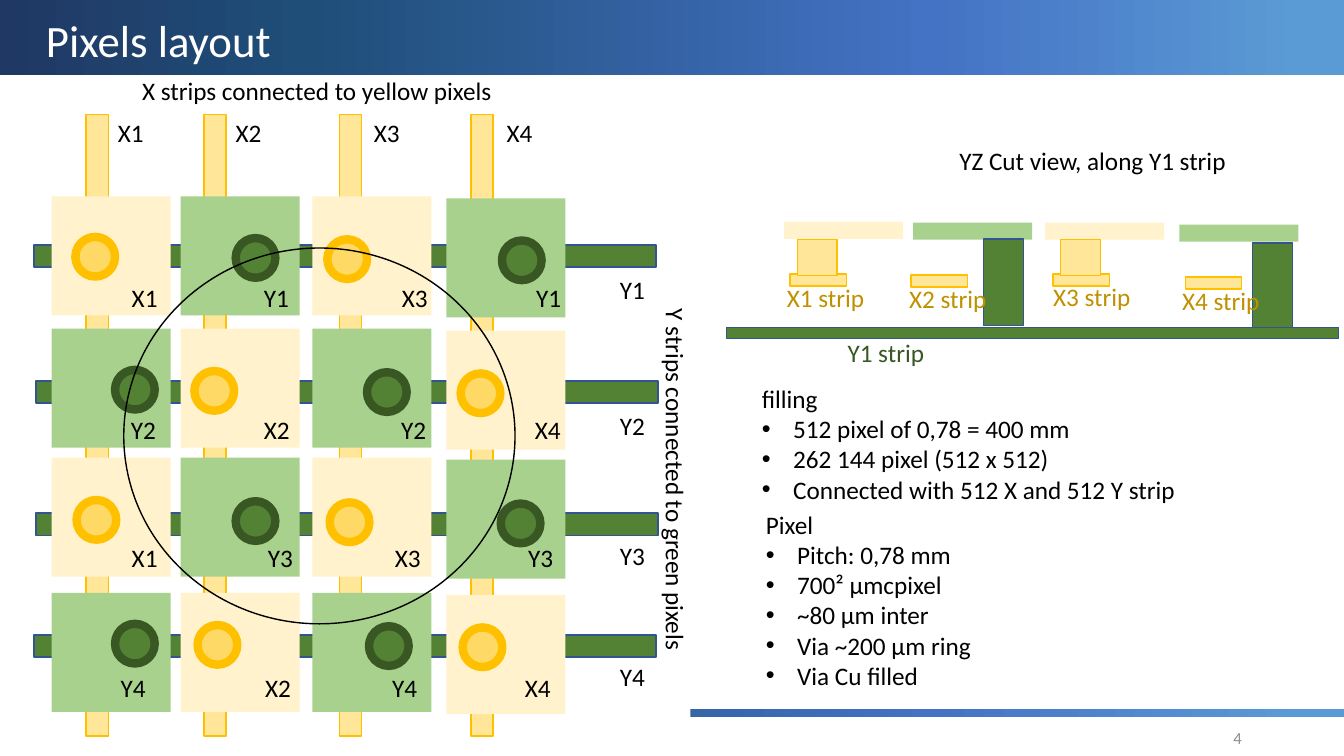
import dataclasses

import lxml.etree
import pptx
import pptx.dml.color
import pptx.enum.shapes
import pptx.enum.text
import pptx.oxml.ns
import pptx.util

Cm = pptx.util.Cm
Pt = pptx.util.Pt
RGB = pptx.dml.color.RGBColor.from_string
qn = pptx.oxml.ns.qn
RECT = pptx.enum.shapes.MSO_SHAPE.RECTANGLE
OVAL = pptx.enum.shapes.MSO_SHAPE.OVAL
ALIGN = pptx.enum.text.PP_ALIGN
ANCHOR = pptx.enum.text.MSO_ANCHOR


@dataclasses.dataclass(frozen=True)
class Theme:
    font: str = "Calibri"
    title_size: int = 32
    body_size: int = 18
    number_size: int = 12
    white: str = "FFFFFF"
    black: str = "000000"
    grey: str = "8C8C8C"
    gold: str = "FFC000"
    gold_text: str = "BF9000"
    x_strip: str = "FFE699"
    x_via: str = "FFD966"
    x_pixel: str = "FFF2CC"
    y_strip: str = "548235"
    y_ring: str = "385723"
    y_pixel: str = "A9D18E"
    y_edge: str = "325491"
    bar: tuple = ((0, "203864"), (23, "1F4E79"), (69, "4472C4"), (97, "5B9BD5"))


theme = Theme()
deck = pptx.Presentation()
deck.slide_width, deck.slide_height = Cm(33.87), Cm(19.05)
slide = deck.slides.add_slide(deck.slide_layouts[6])


def add_block(kind, left, top, width, height, fill=None, edge=None, weight=1):
    block = slide.shapes.add_shape(kind, Cm(left), Cm(top), Cm(width), Cm(height))
    block.shadow.inherit = False
    if fill:
        block.fill.solid()
        block.fill.fore_color.rgb = RGB(fill)
    else:
        block.fill.background()
    if edge:
        block.line.color.rgb = RGB(edge)
        block.line.width = Pt(weight)
    else:
        block.line.fill.background()
    return block


def add_label(lines, left, top, width, height=1.02, color=theme.black, size=theme.body_size):
    """Places a text box; every line after the first is bulleted."""
    label = slide.shapes.add_textbox(Cm(left), Cm(top), Cm(width), Cm(height))
    frame = label.text_frame
    frame.word_wrap = False
    frame.text = "\n".join(lines)
    for index, paragraph in enumerate(frame.paragraphs):
        if index:
            props = paragraph._p.get_or_add_pPr()
            props.set("marL", str(Cm(0.79)))
            props.set("indent", str(Cm(-0.79)))
            lxml.etree.SubElement(props, qn("a:buFont"), typeface="Arial")
            lxml.etree.SubElement(props, qn("a:buChar"), char="•")
        paragraph.font.name = theme.font
        paragraph.font.size = Pt(size)
        paragraph.font.color.rgb = RGB(color)
    return label


# Header and footer bars
for bar_top, bar_height in ((0, 1.88), (17.86, 0.2)):
    bar = add_block(RECT, 0, bar_top, 33.87, bar_height)
    bar.fill.gradient()
    bar.fill.gradient_angle = 0
    stops = next(bar._element.iter(qn("a:gsLst")))
    stops.clear()
    for position, color in theme.bar:
        stop = lxml.etree.SubElement(stops, qn("a:gs"), pos=str(position * 1000))
        lxml.etree.SubElement(stop, qn("a:srgbClr"), val=color)

title = add_label(["Pixels layout"], 0.91, 0.2, 14.17, 1.63, theme.white, theme.title_size)
title.text_frame.word_wrap = True
page_number = add_label(["4"], 23.93, 18.08, 7.62, 1.02, theme.grey, theme.number_size)
page_number.text_frame.word_wrap = True
page_number.text_frame.vertical_anchor = ANCHOR.MIDDLE
page_number.text_frame.paragraphs[0].alignment = ALIGN.RIGHT

# White ground of the pixel map
add_block(RECT, 0, 2.03, 17.4, 16.76, theme.white)

# Y strips, then X strips, each with its name: strip left, strip top, name position
y_strips = ((0.86, 6.17, 6.78), (0.91, 9.6, 10.21), (0.91, 12.93, 13.49), (0.86, 16, 16.54))
for number, (left, top, name_top) in enumerate(y_strips, 1):
    add_block(RECT, left, top, 15.67, 0.56, theme.y_strip, theme.y_edge)
    add_label([f"Y{number}"], 15.37, name_top, 1.14)

x_strips = ((2.17, 2.72), (5.14, 5.69), (8.55, 9.17), (11.87, 12.52))
for number, (left, name_left) in enumerate(x_strips, 1):
    add_block(RECT, left, 2.88, 0.56, 15.67, theme.x_strip, theme.gold)
    add_label([f"X{number}"], name_left, 2.82, 1.17)

# Checkerboard of pixels, each with a via and the name of its strip
pixel_lefts = (1.3, 4.55, 7.87, 11.25)
# Per row: pixel top, via top, name top, via lefts, name lefts
pixel_rows = (
    (4.95, 5.97, 6.99, (1.9, 5.94, 8.25, 12.65), (3.07, 6.4, 9.88, 13.26)),
    (8.28, 9.32, 10.31, (2.9, 4.9, 9.25, 11.61), (3.05, 6.4, 9.86, 13.23)),
    (11.53, 12.6, 13.54, (1.93, 5.94, 8.31, 12.62), (3.07, 6.5, 9.7, 13.06)),
    (14.94, 15.72, 16.81, (2.9, 4.98, 9.3, 11.66), (2.79, 6.43, 9.63, 12.98)),
)
for row, (pixel_top, via_top, name_top, via_lefts, name_lefts) in enumerate(pixel_rows):
    for column, pixel_left in enumerate(pixel_lefts):
        if (row + column) % 2 == 0:
            name, pixel, via, ring = f"X{column + 1}", theme.x_pixel, theme.x_via, theme.gold
        else:
            name, pixel, via, ring = f"Y{row + 1}", theme.y_pixel, theme.y_strip, theme.y_ring
        drop = 0.05 if column == 3 else 0
        add_block(RECT, pixel_left, pixel_top + drop, 3, 3, pixel)
        add_block(OVAL, via_lefts[column], via_top + 0.03 * column, 1, 1, via, ring, 6)
        add_label([name], name_lefts[column], name_top, 1.17)

add_block(OVAL, 3.12, 6.25, 9.86, 9.47, edge=theme.black)
add_label(["X strips connected to yellow pixels"], 3.33, 1.78, 9.42)
add_label(["Y strips connected to green pixels"], 12.42, 11.63, 9.22).rotation = 90

# Cut view along the Y1 strip
add_label(["YZ Cut view, along Y1 strip"], 23.93, 3.53, 7.29)
plates = ((19.76, 5.59), (23.01, 5.61), (26.34, 5.61), (29.72, 5.66))
for number, (left, top) in enumerate(plates):
    add_block(RECT, left, top, 3, 0.43, theme.y_pixel if number % 2 else theme.x_pixel)
for left, top in ((24.79, 6.02), (31.57, 6.12)):
    add_block(RECT, left, top, 1, 2.18, theme.y_strip, theme.y_edge)
add_block(RECT, 18.31, 8.25, 15.42, 0.28, theme.y_strip, theme.y_edge)
add_label(["Y1 strip"], 21.11, 8.38, 2.46, color=theme.y_ring)

# X strips in the cut: strip left, strip top, name left, name top
cut_strips = ((19.91, 6.91, 19.58, 6.99), (22.96, 6.93, 22.66, 7.01),
              (26.54, 6.91, 26.29, 6.96), (29.87, 6.98, 29.54, 7.06))
for number, (left, top, name_left, name_top) in enumerate(cut_strips, 1):
    add_block(RECT, left, top, 1.42, 0.3, theme.x_strip, theme.gold)
    if number % 2:
        add_block(RECT, left + 0.19, 6.03, 1, 0.91, theme.x_strip, theme.gold)
    add_label([f"X{number} strip"], name_left, name_top, 2.49, color=theme.gold_text)

# Key figures
add_label(["filling", "512 pixel of 0,78 = 400 mm", "262 144 pixel (512 x 512)",
           "Connected with 512 X and 512 Y strip"], 18.95, 9.53, 11.2, 4.11)
add_label(["Pixel", "Pitch: 0,78 mm", "700² µmcpixel", "~80 µm inter",
           "Via ~200 µm ring", "Via Cu filled"], 19.05, 12.7, 5.74, 5.64)

deck.save("out.pptx")
